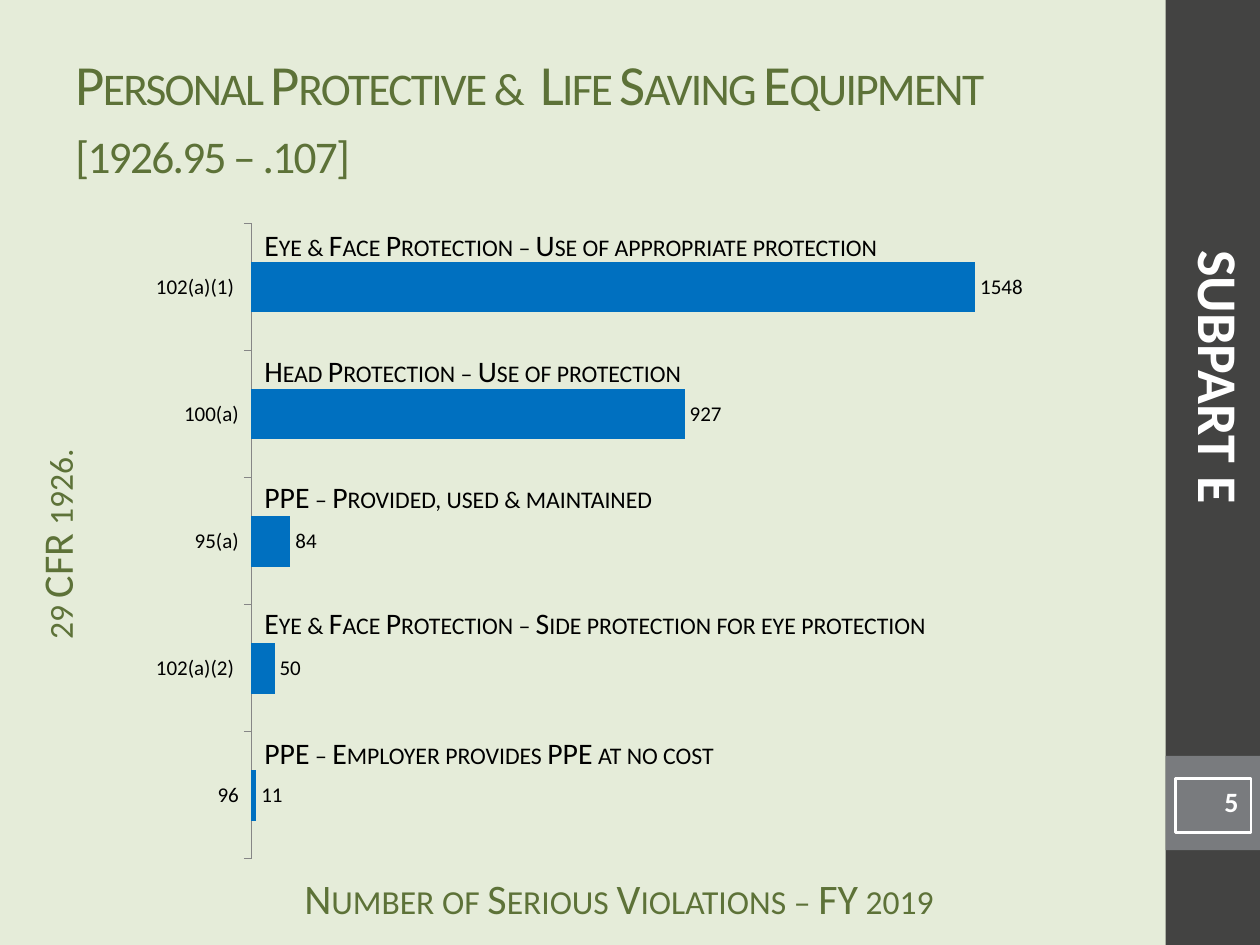
"""Build the Subpart E slide: serious violations for protective equipment."""
from dataclasses import dataclass

from pptx import Presentation
from pptx.chart.data import CategoryChartData
from pptx.dml.color import RGBColor as RGB
from pptx.enum.chart import XL_CHART_TYPE as ChartType
from pptx.enum.chart import XL_LABEL_POSITION as LabelPos
from pptx.enum.chart import XL_TICK_MARK as Tick
from pptx.enum.shapes import MSO_SHAPE as Shape
from pptx.enum.text import MSO_ANCHOR as Anchor
from pptx.enum.text import PP_ALIGN as Align
from pptx.util import Cm, Pt


@dataclass(frozen=True)
class Theme:
    """Colours and type sizes of the slide."""
    font: str = "Calibri"
    back: RGB = RGB(0xE5, 0xEC, 0xD9)
    band: RGB = RGB(0x43, 0x43, 0x42)
    block: RGB = RGB(0x79, 0x7B, 0x7E)
    green: RGB = RGB(0x5D, 0x72, 0x38)
    bar: RGB = RGB(0x00, 0x70, 0xC0)
    axis: RGB = RGB(0x86, 0x86, 0x86)
    black: RGB = RGB(0, 0, 0)
    white: RGB = RGB(0xFF, 0xFF, 0xFF)
    title: float = 32.4
    subpart: float = 32
    caption: float = 24
    label: float = 17
    number: float = 16
    chart: float = 12


T = Theme()

VIOLATIONS = [
    ("102(a)(1) ", 1548, "Eye & Face Protection – Use of appropriate protection", 4.45, 13.34),
    ("100(a)", 927, "Head Protection – Use of protection", 6.99, 9.19),
    ("95(a)", 84, "PPE – Provided, used & maintained", 9.53, 8.74),
    ("102(a)(2) ", 50, "Eye & Face Protection – Side protection for eye protection", 12.07, 14.35),
    ("96", 11, "PPE – Employer provides PPE at no cost", 14.68, 9.93),
]


def add_run(p, text, size, color, bold=False, small=False, spacing=None):
    """Add one formatted run to a paragraph."""
    r = p.add_run()
    r.text = text
    r.font.name = T.font
    r.font.size = Pt(size)
    r.font.bold = bold
    r.font.color.rgb = color
    props = r.font._element
    if small:
        props.set("cap", "small")
    if spacing is not None:
        props.set("spc", str(spacing))


def add_text(s, box, text, size, color, align=Align.LEFT, anchor=Anchor.TOP,
             wrap=True, rotation=0, top_inset=0.13, **run_style):
    """Add a text box holding one run."""
    sp = s.shapes.add_textbox(*map(Cm, box))
    sp.rotation = rotation
    tf = sp.text_frame
    tf.word_wrap = wrap
    tf.vertical_anchor = anchor
    tf.margin_top = Cm(top_inset)
    p = tf.paragraphs[0]
    p.alignment = align
    add_run(p, text, size, color, **run_style)


def add_rect(s, box, fill=None, line=None):
    """Add a plain rectangle and return it."""
    sp = s.shapes.add_shape(Shape.RECTANGLE, *map(Cm, box))
    sp.shadow.inherit = False
    if fill is None:
        sp.fill.background()
    else:
        sp.fill.solid()
        sp.fill.fore_color.rgb = fill
    if line is None:
        sp.line.fill.background()
    else:
        sp.line.color.rgb = line
        sp.line.width = Pt(1.5)
    return sp


def add_page_number(s, box, text):
    """Add the outlined page number."""
    tf = add_rect(s, box, line=T.white).text_frame
    tf.vertical_anchor = Anchor.TOP
    p = tf.paragraphs[0]
    p.alignment = Align.RIGHT
    add_run(p, text, T.number, T.white, bold=True)


def add_bar_chart(s, box, rows):
    """Add the bar chart, with the first row on top."""
    data = CategoryChartData()
    data.categories = [row[0] for row in reversed(rows)]
    data.add_series("Series 1", [row[1] for row in reversed(rows)])
    chart = s.shapes.add_chart(ChartType.BAR_CLUSTERED, *map(Cm, box), data).chart
    chart.has_legend = False
    chart.has_title = False
    chart.font.name = T.font
    chart.font.size = Pt(T.chart)
    chart.font.color.rgb = T.black

    cat = chart.category_axis
    cat.major_tick_mark = Tick.OUTSIDE
    cat.has_major_gridlines = False
    cat.format.line.color.rgb = T.axis
    val = chart.value_axis
    val.has_major_gridlines = False
    val.minimum_scale, val.maximum_scale = 0, 1800
    val.visible = False

    plot = chart.plots[0]
    plot.gap_width = 150
    plot.vary_by_categories = False
    plot.has_data_labels = True
    labels = plot.data_labels
    labels.show_value = True
    labels.position = LabelPos.OUTSIDE_END
    labels.font.size = Pt(T.chart)
    fill = plot.series[0].format.fill
    fill.solid()
    fill.fore_color.rgb = T.bar


def main():
    """Build and save the slide."""
    prs = Presentation()
    prs.slide_width, prs.slide_height = Cm(25.4), Cm(19.05)
    s = prs.slides.add_slide(prs.slide_layouts[6])
    s.background.fill.solid()
    s.background.fill.fore_color.rgb = T.back

    add_rect(s, (23.5, 0, 1.9, 19.05), T.band)
    add_rect(s, (23.5, 15.24, 1.9, 1.9), T.block)
    caption = dict(size=T.caption, color=T.green, align=Align.CENTER, top_inset=0, small=True)
    add_text(s, (5.28, 17.58, 14.4, 0.84), "Number of Serious Violations – FY 2019", **caption)
    add_text(s, (-3.96, 10.24, 10.64, 1.47), "29 CFR 1926.", rotation=270, **caption)
    add_bar_chart(s, (2.75, 4.24, 19.68, 13.34), VIOLATIONS)
    add_text(s, (1.27, 0.76, 21.16, 3.18),
             "Personal Protective &  Life Saving Equipment [1926.95 – .107]",
             T.title, T.green, anchor=Anchor.MIDDLE, small=True, spacing=-100)
    add_page_number(s, (23.7, 15.7, 1.52, 1.09), "5")
    for _, _, text, top, width in VIOLATIONS:
        add_text(s, (5.08, top, width, 0.99), text, T.label, T.black, wrap=False, small=True)
    add_text(s, (17, 6.78, 15.19, 1.63), "SUBPART E", T.subpart, T.white,
             align=Align.CENTER, rotation=90, bold=True)
    prs.save("out.pptx")


if __name__ == "__main__":
    main()
